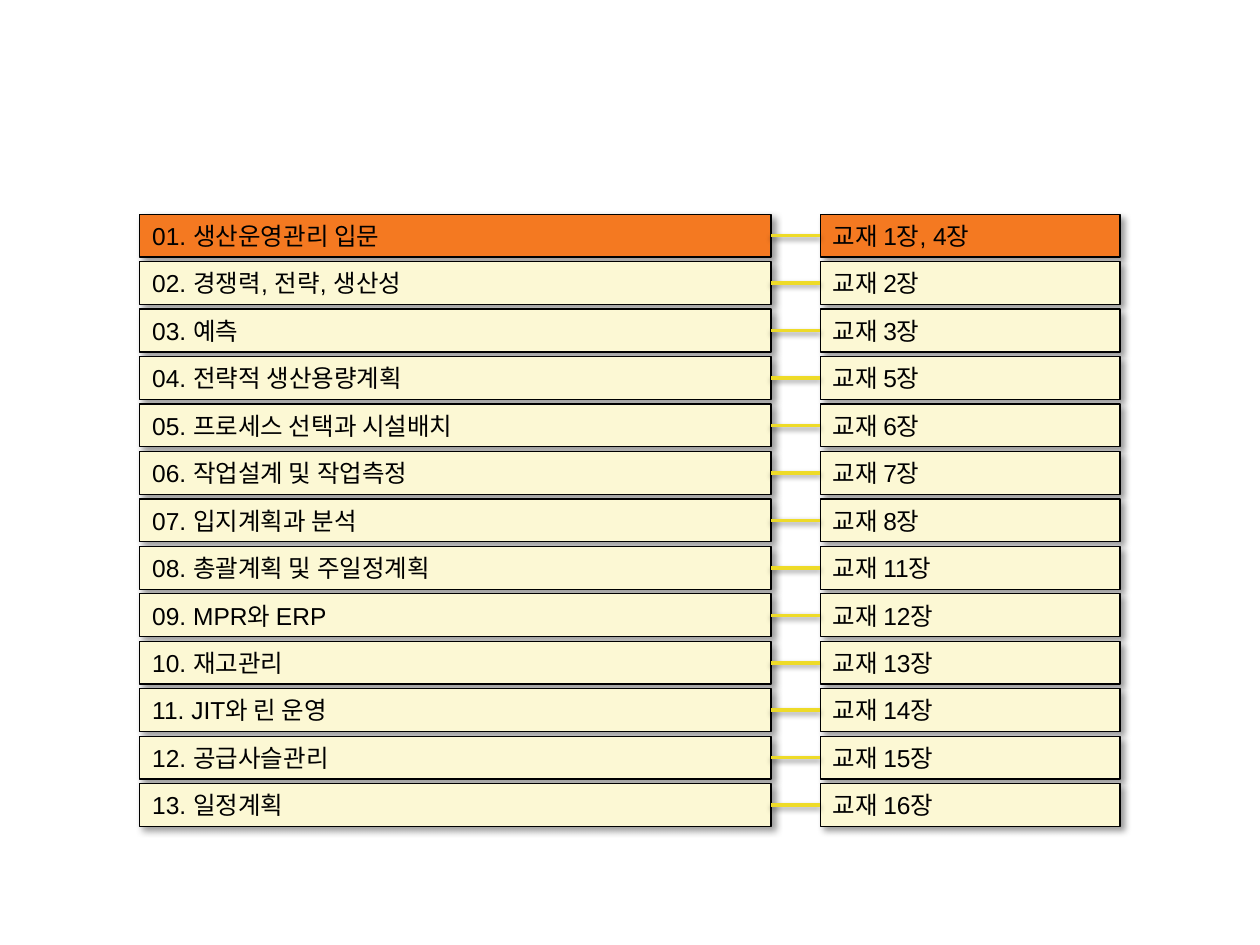
from lxml.etree import SubElement
from pptx import Presentation
from pptx.dml.color import RGBColor
from pptx.enum.shapes import MSO_CONNECTOR, MSO_SHAPE
from pptx.enum.text import MSO_ANCHOR, MSO_AUTO_SIZE, PP_ALIGN
from pptx.oxml.ns import qn
from pptx.util import Inches, Pt


def rgb(color):
    return RGBColor.from_string(color)


def add_shadow(sp, alpha, blur, dist, angle):
    effects = SubElement(sp._element.spPr, qn("a:effectLst"))
    shadow = SubElement(effects, qn("a:outerShdw"), blurRad=str(Pt(blur)),
                        dist=str(Pt(dist)), dir=str(angle * 60000),
                        algn="tl", rotWithShape="0")
    color = SubElement(shadow, qn("a:srgbClr"), val="000000")
    SubElement(color, qn("a:alpha"), val=str(alpha * 1000))


prs = Presentation()
prs.slide_width, prs.slide_height = Inches(10), Inches(7.5)
s = prs.slides.add_slide(prs.slide_layouts[6])

# Course topics and matching textbook chapters
topics = ["생산운영관리 입문", "경쟁력, 전략, 생산성", "예측", "전략적 생산용량계획",
          "프로세스 선택과 시설배치", "작업설계 및 작업측정", "입지계획과 분석",
          "총괄계획 및 주일정계획", "MPR와 ERP", "재고관리", "JIT와 린 운영",
          "공급사슬관리", "일정계획"]
chapters = ["1장, 4장"] + [f"{n}장" for n in (2, 3, 5, 6, 7, 8, *range(11, 17))]
columns = [
    (1.11, 5.01, [f"{n:02}. {topic}" for n, topic in enumerate(topics, 1)]),
    (6.51, 2.38, [f"교재 {chapter}" for chapter in chapters]),
]

first_top, last_top, height = 1.7, 6.22, 0.34
pitch = (last_top - first_top) / (len(topics) - 1)
frame_format = {"word_wrap": True, "auto_size": MSO_AUTO_SIZE.SHAPE_TO_FIT_TEXT,
                "vertical_anchor": MSO_ANCHOR.MIDDLE}
font_format = {"name": "Arial", "size": Pt(14)}

# Two columns of boxes, the first row highlighted
boxes = []
for left, width, labels in columns:
    column = []
    for i, label in enumerate(labels):
        sp = s.shapes.add_shape(MSO_SHAPE.RECTANGLE, Inches(left),
                                Inches(first_top + i * pitch),
                                Inches(width), Inches(height))
        sp.fill.solid()
        sp.fill.fore_color.rgb = rgb("F47921" if i == 0 else "FCF8D4")
        sp.line.color.rgb = rgb("000000")
        sp.line.width = Pt(0.75)
        add_shadow(sp, 40, 4, 3, 45)
        tf = sp.text_frame
        for key, value in frame_format.items():
            setattr(tf, key, value)
        p = tf.paragraphs[0]
        p.alignment = PP_ALIGN.LEFT
        r = p.add_run()
        r.text = label
        for key, value in font_format.items():
            setattr(r.font, key, value)
        r.font.color.rgb = rgb("000000")
        column.append(sp)
    boxes.append(column)

# Links from each topic to its chapter
for topic_box, chapter_box in zip(*boxes):
    link = s.shapes.add_connector(MSO_CONNECTOR.STRAIGHT, 0, 0, 0, 0)
    link.begin_connect(topic_box, 3)
    link.end_connect(chapter_box, 1)
    link.line.color.rgb = rgb("EEDB28")
    link.line.width = Pt(2)
    add_shadow(link, 38, 3.1, 1.6, 90)

prs.save("out.pptx")
